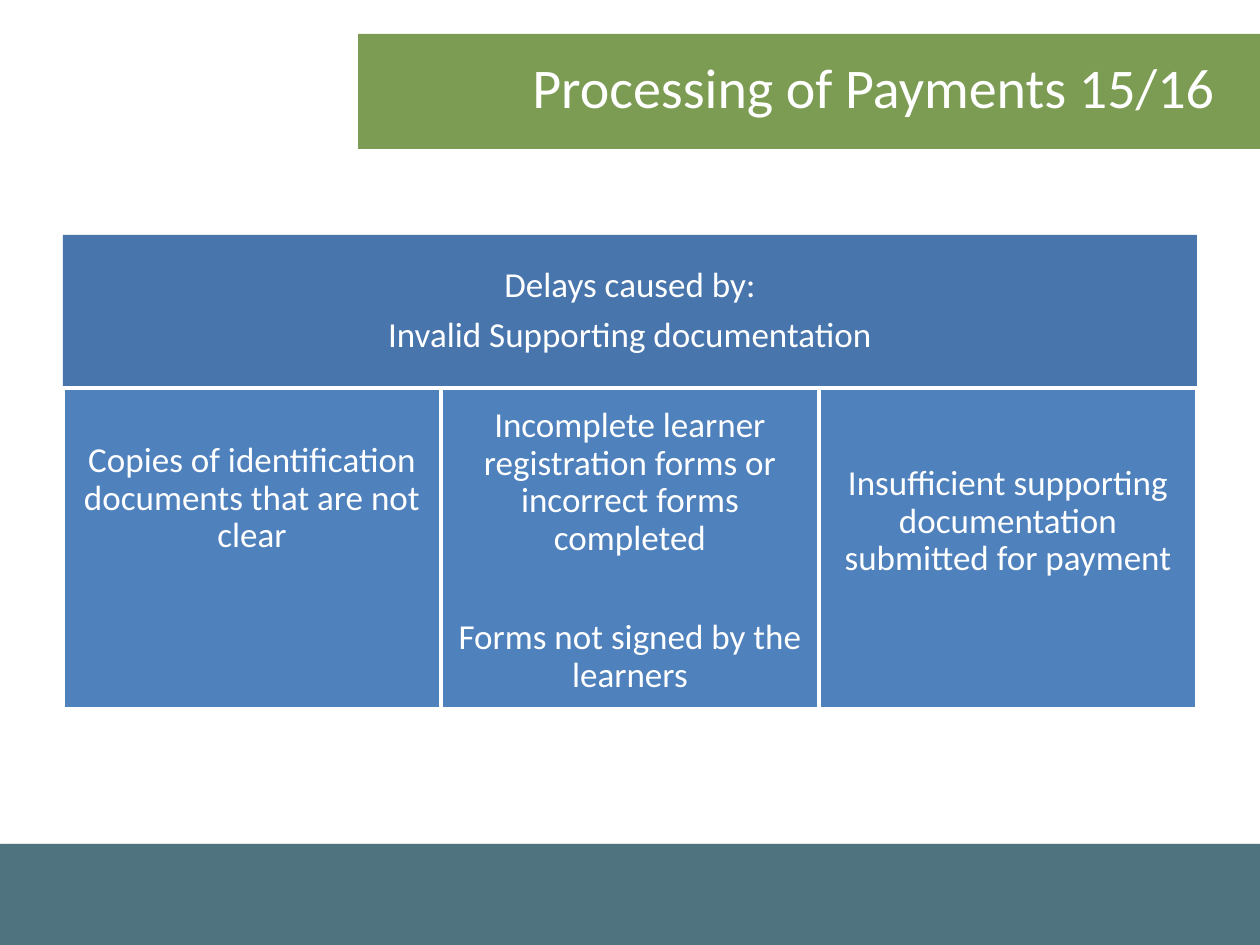
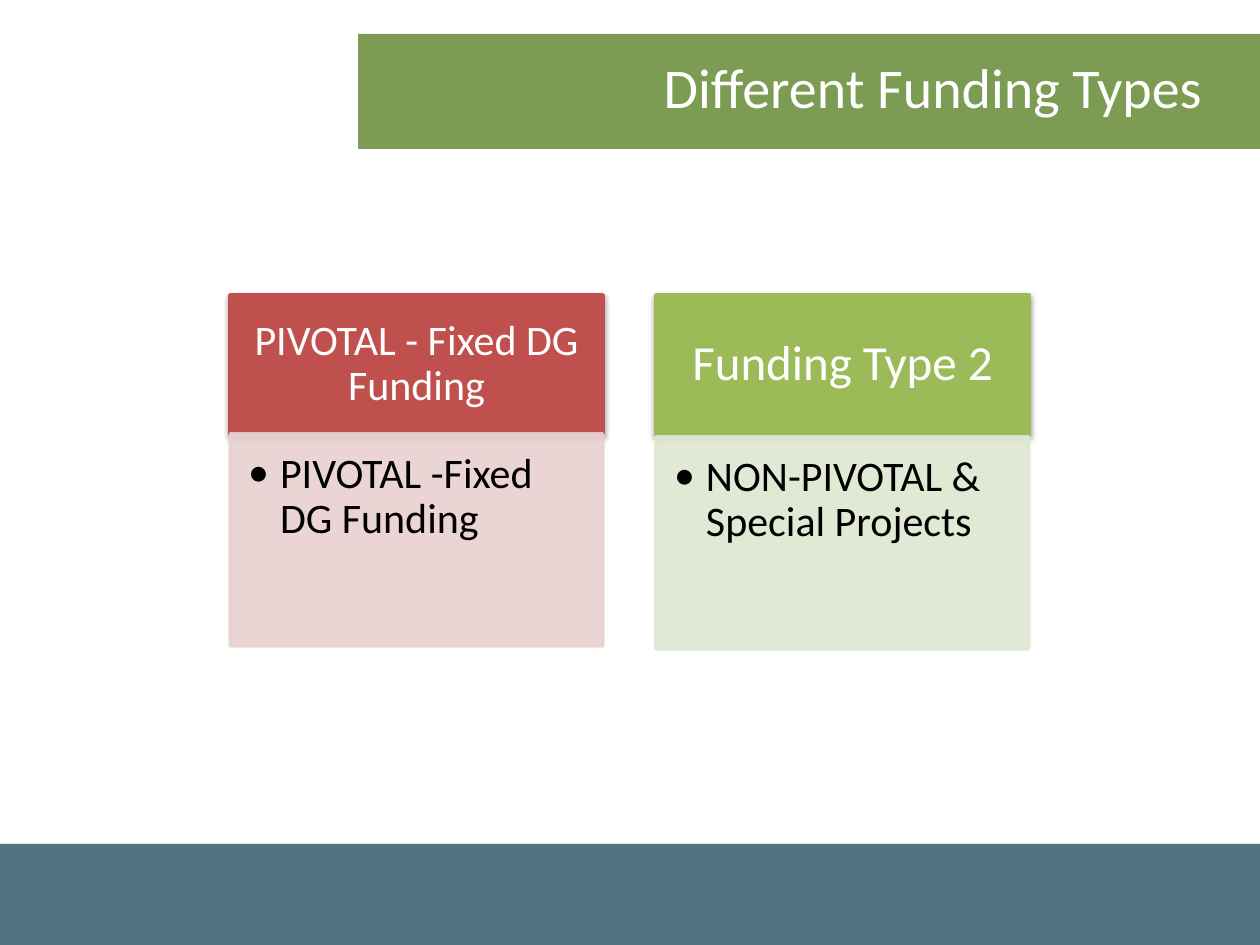
from lxml.etree import SubElement as Sub
from pptx import Presentation
from pptx.dml.color import RGBColor as RGB
from pptx.enum.shapes import MSO_SHAPE as Kind
from pptx.enum.text import MSO_ANCHOR as Anchor, MSO_AUTO_SIZE as Fit, PP_ALIGN as Align
from pptx.oxml.ns import qn
from pptx.util import Pt

PX = 914400 / 126
FONT = "Calibri"
WHITE = RGB(0xFF, 0xFF, 0xFF)
BLACK = RGB(0, 0, 0)
TEAL = RGB(0x4F, 0x73, 0x7F)
OLIVE = RGB(0x7B, 0x9C, 0x52)
NAVY = RGB(0x48, 0x75, 0xAC)
BLUE = RGB(0x4F, 0x81, 0xBD)
RED = RGB(0xC0, 0x50, 0x4D)
PINK = RGB(0xE8, 0xD0, 0xD0)
GREEN = RGB(0x9B, 0xBB, 0x59)
MINT = RGB(0xDE, 0xE7, 0xD1)


def emu(px):
    return round(px * PX)


def place(shape, x, y, w, h):
    shape.left, shape.top, shape.width, shape.height = map(emu, (x, y, w, h))


def paint(shape, fill, line=None, alpha=None):
    shape.fill.solid()
    shape.fill.fore_color.rgb = fill
    if line is None:
        shape.line.fill.background()
    else:
        shape.line.color.rgb = line
        shape.line.width = Pt(2)
    if alpha:
        for color in shape._element.spPr.iter(qn("a:srgbClr")):
            Sub(color, qn("a:alpha"), val=str(alpha * 1000))


def shade(shape, alpha):
    """Add a soft black shadow straight below the shape."""
    effects = shape._element.spPr.find(qn("a:effectLst"))
    drop = Sub(effects, qn("a:outerShdw"), blurRad=str(Pt(3.1)), dist=str(Pt(1.7)),
               dir="5400000", rotWithShape="0")
    color = Sub(drop, qn("a:srgbClr"), val="000000")
    Sub(color, qn("a:alpha"), val=str(alpha * 1000))


def rect(slide, box, fill, line=None):
    shape = slide.shapes.add_shape(Kind.RECTANGLE, *map(emu, box))
    shape.shadow.inherit = False
    paint(shape, fill, line)
    return shape


def write(shape, lines, size=20, color=WHITE, align=Align.CENTER, anchor=Anchor.MIDDLE,
          inset=(9, 9, 9, 9), leading=0.9, gap=0, dot=0):
    """Fill the shape with paragraphs; inset is left, top, right, bottom in px."""
    frame = shape.text_frame
    frame.word_wrap = True
    frame.auto_size = Fit.NONE
    frame.vertical_anchor = anchor
    (frame.margin_left, frame.margin_top,
     frame.margin_right, frame.margin_bottom) = map(emu, inset)
    for i, line in enumerate(lines):
        para = frame.add_paragraph() if i else frame.paragraphs[0]
        if dot:
            props = para._p.get_or_add_pPr()
            props.set("marL", str(emu(dot)))
            props.set("indent", str(-emu(dot)))
            Sub(props, qn("a:buFont"), typeface=FONT)
            Sub(props, qn("a:buChar"), char="•")
        para.alignment = align
        para.line_spacing = leading
        para.space_before = Pt(gap if i else 0)
        run = para.add_run()
        run.text = line
        run.font.name = FONT
        run.font.size = Pt(size)
        run.font.color.rgb = color


def brand(deck, slide):
    """Draw the footer and title band, then move them to the slide master."""
    foot = rect(slide, (0, 844, 1260, 101), TEAL)
    shade(foot, 35)
    band = rect(slide, (358, 34, 902, 115), OLIVE)
    tree = deck.slide_master.shapes._spTree
    for i, shape in enumerate((foot, band)):
        shape._element._nvXxPr.cNvPr.set("id", str(20 + i))
        tree.insert(2 + i, shape._element)


def start(deck, layout, title):
    slide = deck.slides.add_slide(deck.slide_layouts.get_by_name(layout))
    head = slide.shapes.title
    place(head, 94, 8, 1134, 157)
    write(head, [title], size=32, align=Align.RIGHT, leading=1, inset=(13, 6, 13, 6))
    return slide


def delays(slide):
    head = rect(slide, (63, 235, 1134, 153), NAVY)
    write(head, ["Delays caused by:", "Invalid Supporting documentation"], gap=7)
    causes = [
        (54, ["Copies of identification documents that are not clear"]),
        (19, ["Incomplete learner registration forms or incorrect forms completed",
              "Forms not signed by the learners"]),
        (77, ["Insufficient supporting documentation submitted for payment"]),
    ]
    for i, (top, lines) in enumerate(causes):
        cell = rect(slide, (63 + 378 * i, 388, 378, 321), BLUE, WHITE)
        write(cell, lines, anchor=Anchor.TOP, inset=(9, top, 9, 9), gap=35)


def panel(slide, body, x, y, name, size, item, dark, pale):
    """Set a shadowed heading over a list placeholder."""
    head = rect(slide, (x, 295, 373, 139), dark, dark)
    shade(head, 38)
    write(head, [name], size=size, inset=(24, 14, 24, 14))
    place(body, x, y, 373, 212)
    paint(body, pale, pale, alpha=90)
    write(body, [item], size=24, color=BLACK, align=Align.LEFT, anchor=Anchor.TOP,
          inset=(18, 18, 24, 27), dot=32)
    slide.shapes._spTree.append(body._element)


def main():
    deck = Presentation()
    deck.slide_width, deck.slide_height = emu(1260), emu(945)

    slide = start(deck, "Title Only", "Processing of Payments 15/16")
    brand(deck, slide)
    delays(slide)

    slide = start(deck, "Two Content", "Different Funding Types ")
    left, right = slide.placeholders[1], slide.placeholders[2]
    panel(slide, left, 230, 434, "PIVOTAL - Fixed DG Funding", 24,
          "PIVOTAL -Fixed DG Funding", RED, PINK)
    panel(slide, right, 656, 437, "Funding Type 2", 28,
          "NON-PIVOTAL & Special Projects", GREEN, MINT)

    deck.save("out.pptx")


if __name__ == "__main__":
    main()
